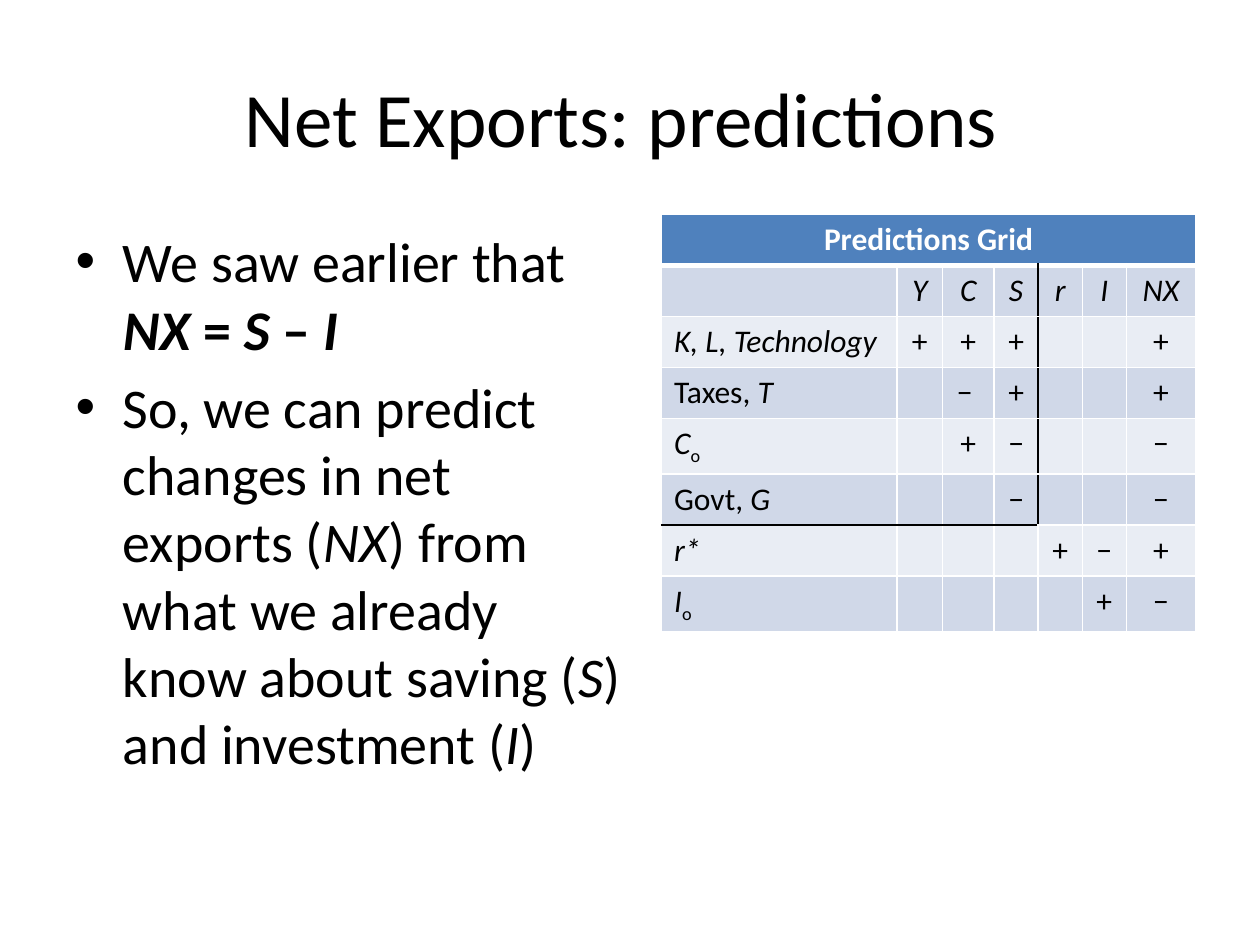
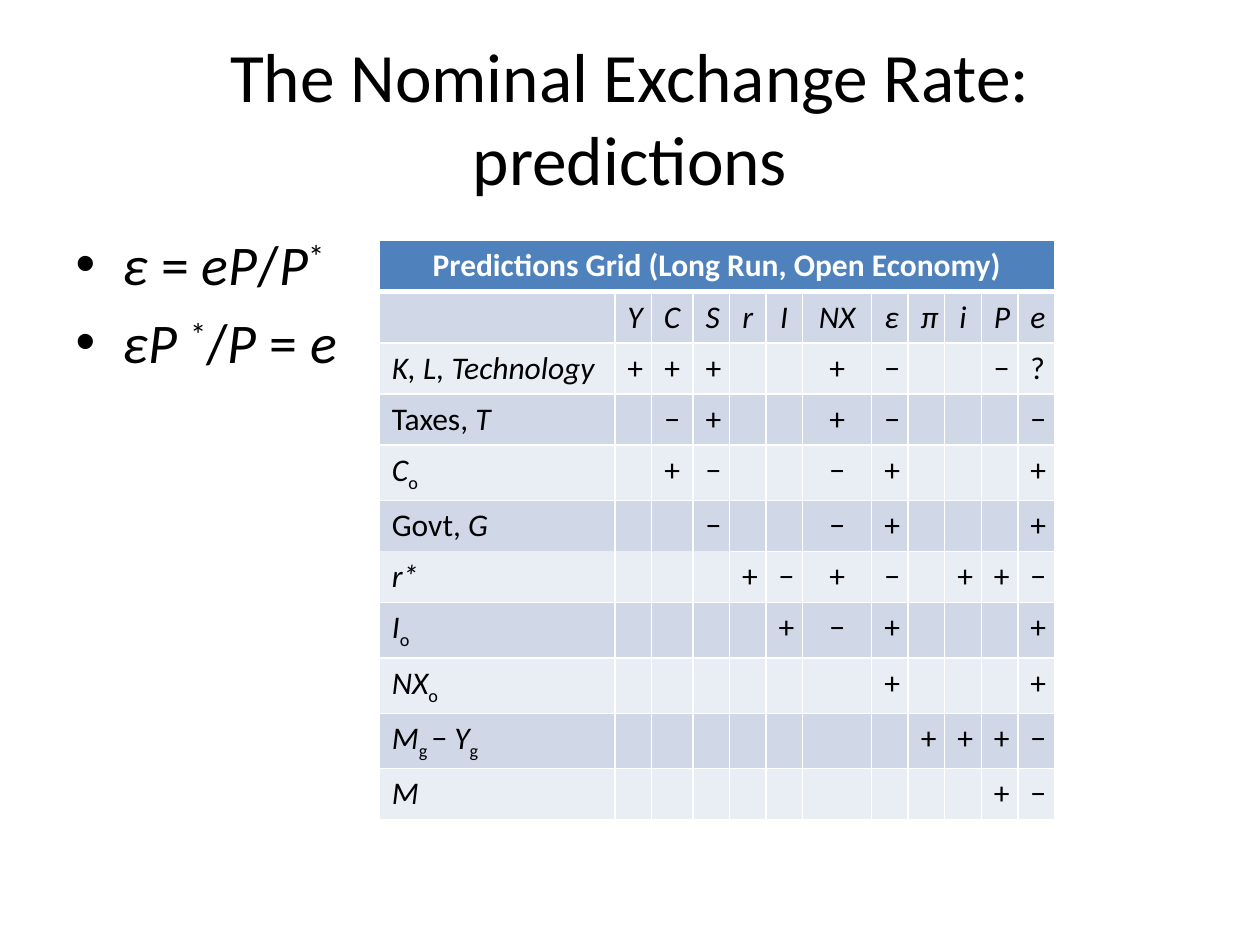
import pptx
import pptx.dml.color
import pptx.enum.text
import pptx.oxml
import pptx.oxml.ns
import pptx.util
from lxml import etree

Inches, Pt = pptx.util.Inches, pptx.util.Pt
RGBColor = pptx.dml.color.RGBColor
CENTER = pptx.enum.text.PP_ALIGN.CENTER

BLACK = RGBColor(0x00, 0x00, 0x00)
WHITE = RGBColor(0xFF, 0xFF, 0xFF)
HEADER_BLUE = RGBColor(0x4F, 0x81, 0xBD)
BANDS = [RGBColor(0xE9, 0xED, 0xF4), RGBColor(0xD0, 0xD8, 0xE8)]

BASELINES = {"^": "30000", "_": "-25000"}

# A run is (text, marks): b bold, i italic, ^ superscript, _ subscript.
VARIABLES = ["Y", "C", "S", "r", "I", "NX", "ε", "π", "i", "P", "e"]
# Each shock with the sign of its effect on every variable.
SHOCKS = [
    ([("K, L, Technology", "i")], "+|+|+|||+|−|||−|?"),
    ([("Taxes, ", ""), ("T", "i")], "|− |+|||+|−||||−"),
    ([("C", "i"), ("o", "_")], "|+|−|||−|+||||+"),
    ([("Govt, ", ""), ("G", "i")], "||−|||−|+||||+"),
    ([("r*", "i")], "|||+|−|+|−||+|+|−"),
    ([("I", "i"), ("o", "_")], "||||+|−|+||||+"),
    ([("NX", "i"), ("o", "_")], "||||||+||||+"),
    ([("M", "i"), ("g ", "_"), ("− ", ""), ("Y", "i"), ("g", "_")],
     "|||||||+|+|+|−"),
    ([("M", "i")], "|||||||||+|−"),
]
# Last row and column of the block for shocks to saving.
SAVING_ROW, SAVING_COL = 5, 3


def set_borders(cell, edges):
    """Draw each edge, given as side: (colour or None, points)."""
    tcPr = cell._tc.get_or_add_tcPr()
    for side in "LRTB":
        color, width = edges[side]
        ln = etree.SubElement(tcPr, pptx.oxml.ns.qn(f"a:ln{side}"), w=str(Pt(width)))
        if color is None:
            etree.SubElement(ln, pptx.oxml.ns.qn("a:noFill"))
        else:
            fill = etree.SubElement(ln, pptx.oxml.ns.qn("a:solidFill"))
            etree.SubElement(fill, pptx.oxml.ns.qn("a:srgbClr"), val=str(color))


def grid_edges(row, col, below, beside):
    """Edges of a cell; below and beside colour the saving block's border."""
    edges = {side: (WHITE, 1) for side in "LRTB"}
    if row == 0:
        edges["B"] = (WHITE, 3)
    if row == 1:
        edges["T"] = (WHITE, 3)
    if col <= SAVING_COL:
        if row == SAVING_ROW:
            edges["B"] = (below, 1)
        elif row == SAVING_ROW + 1:
            edges["T"] = (below, 1)
    if 1 <= row <= SAVING_ROW:
        if col == SAVING_COL:
            edges["R"] = (beside, 1)
        elif col == SAVING_COL + 1:
            edges["L"] = (beside, 1)
    return edges


class Deck:
    font = "Calibri"
    title_size = 44
    body_size = 32
    table_size = 18
    row_height = Inches(0.4)

    def __init__(self):
        self.prs = pptx.Presentation()
        self.prs.slide_width = Inches(10)
        self.prs.slide_height = Inches(7.5)
        self.s = None

    def add_slide(self):
        self.s = self.prs.slides.add_slide(self.prs.slide_layouts[1])

    def add_runs(self, p, runs, size, color=BLACK):
        for text, marks in runs:
            r = p.add_run()
            r.text = text
            r.font.name = self.font
            r.font.size = Pt(size)
            r.font.bold = "b" in marks
            r.font.italic = "i" in marks
            r.font.color.rgb = color
            for mark, offset in BASELINES.items():
                if mark in marks:
                    r._r.get_or_add_rPr().set("baseline", offset)

    def place(self, sp, left, top, width, height):
        sp.left, sp.top = Inches(left), Inches(top)
        sp.width, sp.height = Inches(width), Inches(height)
        sp.text_frame.auto_size = pptx.enum.text.MSO_AUTO_SIZE.NONE
        return sp.text_frame

    def title(self, text, size=title_size):
        tf = self.place(self.s.shapes.title, 0.5, 0.3, 9, 1.25)
        tf.paragraphs[0].alignment = CENTER
        self.add_runs(tf.paragraphs[0], [(text, "")], size)

    def bullets(self, items, top, width):
        tf = self.place(self.s.placeholders[1], 0.5, top, width, 4.95)
        for i, runs in enumerate(items):
            p = tf.add_paragraph() if i else tf.paragraphs[0]
            self.add_runs(p, runs, self.body_size)

    def predictions_grid(self, heading, left, top, widths, shock_count,
                         below=None, beside=WHITE):
        shown = len(widths) - 1
        rows = [[[(heading, "b")]] + [[]] * shown,
                [[]] + [[(name, "i")] for name in VARIABLES[:shown]]]
        for label, signs in SHOCKS[:shock_count]:
            rows.append([label] + [[(sign, "")] if sign else []
                                   for sign in signs.split("|")[:shown]])
        frame = self.s.shapes.add_table(
            len(rows), len(widths), Inches(left), Inches(top),
            Inches(sum(widths)), self.row_height * len(rows))
        table = frame.table
        for column, width in zip(table.columns, widths):
            column.width = Inches(width)
        for i, row in enumerate(rows):
            table.rows[i].height = self.row_height
            for j, runs in enumerate(row):
                cell = table.cell(i, j)
                set_borders(cell, grid_edges(i, j, below, beside))
                cell.fill.solid()
                cell.fill.fore_color.rgb = BANDS[i % 2] if i else HEADER_BLUE
                p = cell.text_frame.paragraphs[0]
                if i == 0 or j > 0:
                    p.alignment = CENTER
                self.add_runs(p, runs, self.table_size, BLACK if i else WHITE)
        table.cell(0, 0).merge(table.cell(0, shown))


def net_exports(deck):
    deck.add_slide()
    deck.title("Net Exports: predictions ")
    deck.bullets([
        [("We saw earlier that ", ""), ("NX ", "bi"), ("= ", "b"), ("S", "bi"),
         (" – ", "b"), ("I", "bi")],
        [("So, we can predict changes in net exports (", ""), ("NX", "i"),
         (") from what we already know about saving (", ""), ("S", "i"),
         (") and investment (", ""), ("I", "i"), (")", "")],
    ], top=1.75, width=4.58)
    deck.predictions_grid(
        "Predictions Grid", 5.25, 1.7,
        [1.87, 0.36, 0.41, 0.35, 0.35, 0.35, 0.55],
        shock_count=6, below=BLACK, beside=BLACK)


def nominal_exchange_rate(deck):
    deck.add_slide()
    deck.title("The Nominal Exchange Rate: predictions", size=39.6)
    deck.bullets([
        [("ε", "i"), (" = ", ""), ("eP", "i"), ("/", ""), ("P", "i"), ("*", "^")],
        [("εP ", "i"), ("*", "^"), ("/", ""), ("P ", "i"), ("= ", ""), ("e", "i")],
    ], top=1.77, width=3.08)
    deck.predictions_grid(
        "Predictions Grid (Long Run, Open Economy)", 3.01, 1.91,
        [1.87, 0.29, 0.33] + [0.29] * 3 + [0.55] + [0.29] * 5,
        shock_count=len(SHOCKS))


def main():
    deck = Deck()
    net_exports(deck)
    nominal_exchange_rate(deck)
    deck.prs.save("out.pptx")


if __name__ == "__main__":
    main()
